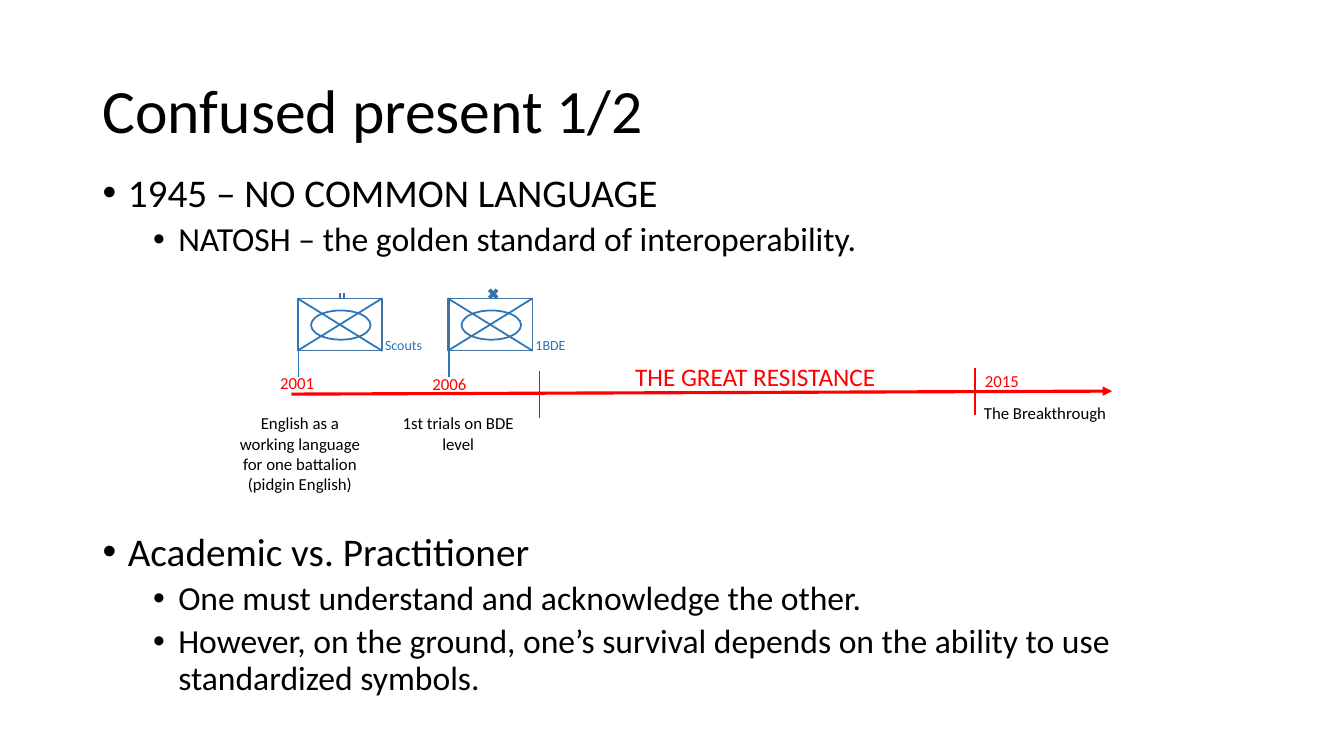
import pptx
import pptx.util
import pptx.dml.color
import pptx.enum.shapes
import pptx.enum.text
import pptx.oxml
import pptx.oxml.ns
import lxml.etree
from dataclasses import dataclass

TITLE = "Confused present 1/2"
# Bullet blocks: (top row, height in rows, [(level, text)])
BULLET_BLOCKS = [
    (6.68, 4.4, [
        (0, "1945 – NO COMMON LANGUAGE"),
        (1, "NATOSH – the golden standard of interoperability."),
    ]),
    (20.92, 7.96, [
        (0, "Academic vs. Practitioner"),
        (1, "One must understand and acknowledge the other."),
        (1, "However, on the ground, one’s survival depends on the ability to use "
            "standardized symbols."),
    ]),
]
# Captions: (left, top, rows, paragraphs)
CAPTIONS = [
    (8.96, 16.2, 3.64, ["English as a working language for one battalion", "(pidgin English)"]),
    (15.24, 16.2, 2, ["1st trials on BDE level"]),
    (38.52, 15.8, 1.2, ["The Breakthrough"]),
]
YEARS = [(10.72, 14.6, "2001"), (16.76, 14.64, "2006"), (38.68, 14.52, "2015")]
PERIOD = "THE GREAT RESISTANCE"
PERIOD_LIMITS = [(21.4, 14.72), (38.68, 14.6)]
# Units: (left, label, label width, size mark)
UNITS = [(11.8, "Scouts", 2.32, "battalion"), (17.77, "1BDE", 2.04, "brigade")]
UNIT_TOP, UNIT_WIDTH, UNIT_HEIGHT = 11.84, 3.36, 2.08


@dataclass(frozen=True)
class Theme:
    font: str = "Calibri"
    ink: str = "000000"
    red: str = "FF0000"
    blue: str = "2E75B6"
    frame: str = "43739E"
    title: float = 44
    levels: tuple = (28, 24)
    period: float = 18
    caption: float = 12
    label: float = 10
    axis: float = 2.25
    stroke: float = 1.25


THEME = Theme()
SHAPES = pptx.enum.shapes.MSO_SHAPE
ALIGN = pptx.enum.text.PP_ALIGN
ANCHOR = pptx.enum.text.MSO_ANCHOR

presentation = pptx.Presentation()
presentation.slide_width = pptx.util.Inches(13.33)
presentation.slide_height = pptx.util.Inches(7.5)
slide = presentation.slides.add_slide(presentation.slide_layouts[6])
CELL = presentation.slide_height / 30


def grid(*cells):
    """Turn grid columns and rows into slide lengths."""
    return [round(cell * CELL) for cell in cells]


def color(code):
    return pptx.dml.color.RGBColor.from_string(code)


def add_run(paragraph, text, size, ink):
    run = paragraph.add_run()
    run.text = text
    run.font.name = THEME.font
    run.font.size = pptx.util.Pt(size)
    run.font.color.rgb = color(ink)


def add_text(box, texts, size, ink=THEME.ink, align=ALIGN.LEFT, wrap=True):
    frame = slide.shapes.add_textbox(*grid(*box)).text_frame
    frame.word_wrap = wrap
    for index, text in enumerate(texts):
        paragraph = frame.paragraphs[0] if index == 0 else frame.add_paragraph()
        paragraph.alignment = align
        add_run(paragraph, text, size, ink)
    return frame


def add_bullets(top, height, items):
    frame = slide.shapes.add_textbox(*grid(3.68, top, 46, height)).text_frame
    frame.word_wrap = True
    for index, (level, text) in enumerate(items):
        paragraph = frame.paragraphs[0] if index == 0 else frame.add_paragraph()
        paragraph.level = level
        paragraph.line_spacing = 0.9
        paragraph.space_before = pptx.util.Pt(5 if level else 10)
        add_run(paragraph, text, THEME.levels[level], THEME.ink)
        properties = paragraph._p.get_or_add_pPr()
        properties.set("marL", str(pptx.util.Inches(0.25 + 0.5 * level)))
        properties.set("indent", str(pptx.util.Inches(-0.25)))
        for tag, name, value in (("a:buFont", "typeface", "Arial"), ("a:buChar", "char", "•")):
            lxml.etree.SubElement(properties, pptx.oxml.ns.qn(tag)).set(name, value)


def add_line(start, end, ink, width=THEME.stroke, arrow=False):
    connector = slide.shapes.add_connector(
        pptx.enum.shapes.MSO_CONNECTOR.STRAIGHT, *grid(*start, *end))
    connector.line.color.rgb = color(ink)
    connector.line.width = pptx.util.Pt(width)
    if arrow:
        line = connector.line._get_or_add_ln()
        lxml.etree.SubElement(line, pptx.oxml.ns.qn("a:tailEnd")).set("type", "triangle")
    lxml.etree.SubElement(connector._element.spPr, pptx.oxml.ns.qn("a:effectLst"))


def add_outline(kind, box, ink, width, fill=None):
    shape = slide.shapes.add_shape(kind, *grid(*box))
    shape.shadow.inherit = False
    if fill:
        shape.fill.solid()
        shape.fill.fore_color.rgb = color(fill)
    else:
        shape.fill.background()
    shape.line.color.rgb = color(ink)
    shape.line.width = pptx.util.Pt(width)


def add_unit(left, label, label_width, mark):
    """Draw a unit flag: pole, crossed frame, oval, size mark and label."""
    right, bottom = left + UNIT_WIDTH, UNIT_TOP + UNIT_HEIGHT
    add_line((left + 0.04, UNIT_TOP), (left + 0.04, bottom + 1.04), THEME.blue)
    add_outline(SHAPES.RECTANGLE, (left, UNIT_TOP, UNIT_WIDTH, UNIT_HEIGHT), THEME.frame, 1)
    add_line((left, bottom), (right, UNIT_TOP), THEME.blue)
    add_line((left, UNIT_TOP), (right, bottom), THEME.blue)
    add_outline(SHAPES.OVAL, (left + 0.54, UNIT_TOP + 0.48, 2.36, 1.16),
                THEME.blue, THEME.stroke)
    add_text((left + 3.08, UNIT_TOP + 1.32, label_width, 1.08), [label],
             THEME.label, THEME.blue, wrap=False)
    if mark == "battalion":
        for offset in (1.68, 1.84):
            add_line((left + offset, UNIT_TOP - 0.2), (left + offset, UNIT_TOP), THEME.blue)
    else:
        add_outline(SHAPES.MATH_MULTIPLY, (left + 1.52, UNIT_TOP - 0.48, 0.56, 0.6),
                    THEME.frame, 0.25, THEME.blue)


def main():
    title = add_text((3.68, 1.6, 46, 5.8), [TITLE], THEME.title)
    title.vertical_anchor = ANCHOR.MIDDLE
    title.paragraphs[0].line_spacing = 0.9
    for block in BULLET_BLOCKS:
        add_bullets(*block)
    add_line((11.56, 15.64), (44.12, 15.52), THEME.red, THEME.axis, arrow=True)
    for unit in UNITS:
        add_unit(*unit)
    for left, top, rows, texts in CAPTIONS:
        add_text((left, top, 5.88, rows), texts, THEME.caption, align=ALIGN.CENTER)
    for left, top, year in YEARS:
        add_text((left, top, 2.36, 1.2), [year], THEME.caption, THEME.red)
    for left, top in PERIOD_LIMITS:
        add_line((left, top), (left, top + 1.88), THEME.red)
    add_text((22.52, 14.16, 14.88, 1.6), [PERIOD], THEME.period, THEME.red, ALIGN.CENTER)
    presentation.save("out.pptx")


if __name__ == "__main__":
    main()
